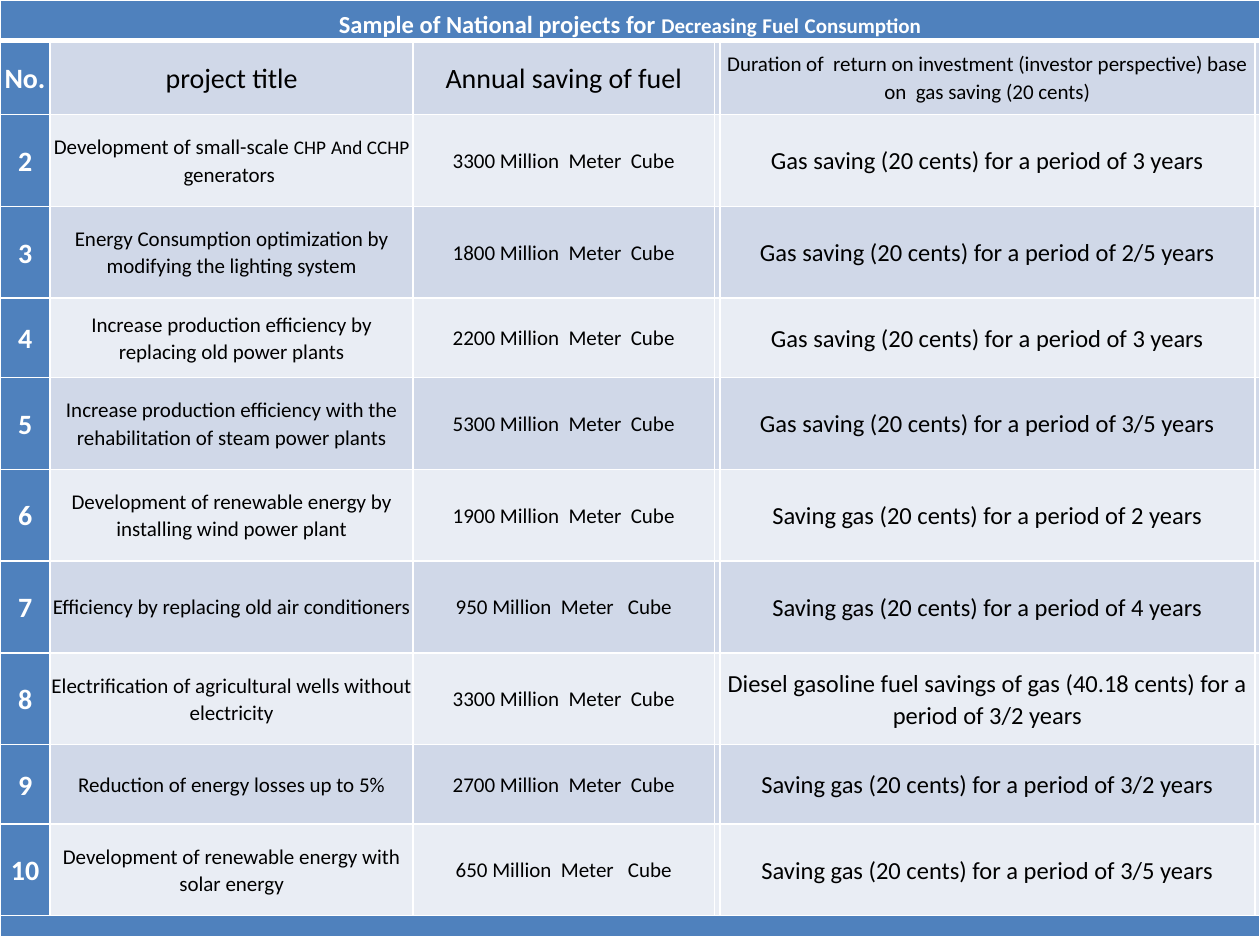
from lxml import etree
from pptx import Presentation
from pptx.dml.color import RGBColor
from pptx.enum import text as t
from pptx.oxml import ns
from pptx.util import Cm, Pt

HUES = {"blue": "4F81BD", "dark": "D0D8E8", "pale": "E9EDF4",
        "white": "FFFFFF", "black": "000000"}
COLS = [1.01, 7.32, 6.07, 0.11, 10.79, 0.1]
TALL, LOW = 1.85, 1.6
ROWS = [0.81, 1.5, TALL, TALL, LOW, TALL, TALL, TALL, TALL, LOW, TALL, 0.43]
NB = chr(160)  # no-break space

TITLE = [("Sample of National projects for" + NB, 14), ("Decreasing", 12),
         (NB, 14), ("Fuel", 12), (NB, 14), ("Consumption", 12)]
HEADS = [("project title", 16), ("Annual saving of fuel", 16),
         ("Duration of  return on investment (investor perspective) base "
          "on  gas saving (20 cents)", 12)]
# Project title, million cubic metres saved, payback
ITEMS = [
    ([("Development of small-scale ", 12), ("CHP", 11), (NB, 12),
      ("And CCHP", 11), (" generators" + NB, 12)], 3300,
     "Gas saving (20 cents) for a period of 3 years"),
    ("Energy Consumption optimization by modifying the lighting system", 1800,
     "Gas saving (20 cents) for a period of 2/5 years"),
    ("Increase production efficiency by replacing old power plants", 2200,
     "Gas saving (20 cents) for a period of 3 years"),
    ("Increase production efficiency with the rehabilitation of steam power plants",
     5300, "Gas saving (20 cents) for a period of 3/5 years"),
    ("Development of renewable energy by installing wind power plant", 1900,
     "Saving gas (20 cents) for a period of 2 years"),
    ("Efficiency by replacing old air conditioners", 950,
     "Saving gas (20 cents) for a period of 4 years"),
    ("Electrification of agricultural wells without electricity", 3300,
     "Diesel gasoline fuel savings of gas (40.18 cents) for a period of 3/2 years"),
    ("Reduction of energy losses up to 5%", 2700,
     "Saving gas (20 cents) for a period of 3/2 years"),
    ("Development of renewable energy with solar energy", 650,
     "Saving gas (20 cents) for a period of 3/5 years"),
]


def write(cell, words, size=12, hue="black", bold=False,
          anchor=t.MSO_ANCHOR.MIDDLE):
    """Fill a cell with a string, or with (string, size) runs."""
    cell.vertical_anchor = anchor
    para = cell.text_frame.paragraphs[0]
    para.alignment = t.PP_ALIGN.CENTER
    para.line_spacing = 1.07
    for part, pts in [(words, size)] if isinstance(words, str) else words:
        run = para.add_run()
        run.text = part
        font = run.font
        font.name, font.size, font.bold = "Calibri", Pt(pts), bold
        font.color.rgb = RGBColor.from_string(HUES[hue])


def edge(cell, top=1, base=1):
    """Draw white borders with the given widths in points."""
    props = cell._tc.get_or_add_tcPr()
    sides = {"lnL": 1, "lnR": 1, "lnT": top, "lnB": base}
    for spot, (side, width) in enumerate(sides.items()):
        line = etree.Element(ns.qn("a:" + side), w=str(Pt(width)))
        fill = etree.SubElement(line, ns.qn("a:solidFill"))
        etree.SubElement(fill, ns.qn("a:srgbClr"), val=HUES["white"])
        props.insert(spot, line)


def style(cell, row, col):
    """Set margins, borders and banded fill."""
    cell.margin_left = cell.margin_right = 0
    cell.margin_top = cell.margin_bottom = 0
    edge(cell, top=3 if row == 1 else 1, base=3 if row == 0 else 1)
    band = "dark" if row % 2 else "pale"
    hue = "blue" if col == 0 or row in (0, len(ROWS) - 1) else band
    cell.fill.solid()
    cell.fill.fore_color.rgb = RGBColor.from_string(HUES[hue])
    # Small text size keeps blank cells from stretching thin rows
    para = cell.text_frame.paragraphs[0]._p
    etree.SubElement(para, ns.qn("a:endParaRPr"), sz="800")


def projects(slide, left, top, width, height):
    """Place the table of projects in the given box."""
    grid = slide.shapes.add_table(len(ROWS), len(COLS), Cm(left), Cm(top),
                                  Cm(width), Cm(height)).table
    for col, size in zip(grid.columns, COLS):
        col.width = Cm(size)
    for row, size in zip(grid.rows, ROWS):
        row.height = Cm(size)
    for r in range(len(ROWS)):
        for c in range(len(COLS)):
            style(grid.cell(r, c), r, c)

    # Title and closing bands
    for r in (0, len(ROWS) - 1):
        grid.cell(r, 0).merge(grid.cell(r, len(COLS) - 1))
    write(grid.cell(0, 0), TITLE, hue="white", bold=True,
          anchor=t.MSO_ANCHOR.BOTTOM)

    # Column heads
    write(grid.cell(1, 0), "No.", size=16, hue="white", bold=True)
    for c, (head, size) in zip((1, 2, 4), HEADS):
        write(grid.cell(1, c), head, size=size)

    # Project rows
    for r, (name, fuel, term) in enumerate(ITEMS, 2):
        gap = NB * (2 if fuel >= 1000 else 3)
        write(grid.cell(r, 0), str(r), size=16, hue="white", bold=True)
        write(grid.cell(r, 1), name)
        write(grid.cell(r, 2), f"{fuel}{NB}Million{NB * 2}Meter{gap}Cube")
        write(grid.cell(r, 4), term, size=14)


def main():
    deck = Presentation()
    deck.slide_width, deck.slide_height = Cm(25.4), Cm(19.05)
    slide = deck.slides.add_slide(deck.slide_layouts[6])
    projects(slide, 0, 0, sum(COLS), sum(ROWS))
    deck.save("out.pptx")


if __name__ == "__main__":
    main()
